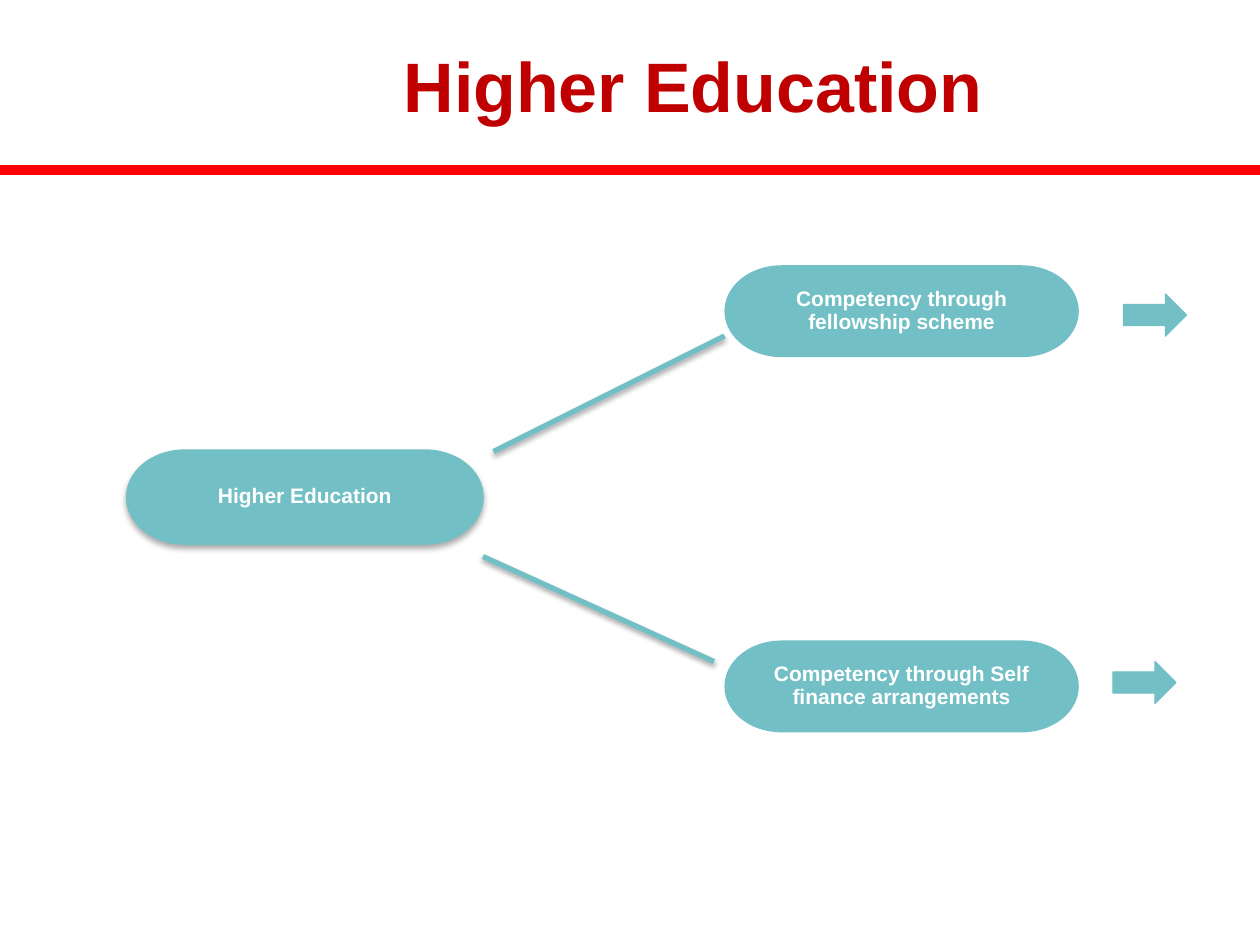
from dataclasses import dataclass

from lxml import etree
from pptx import Presentation
from pptx.dml.color import RGBColor
from pptx.enum.shapes import MSO_CONNECTOR, MSO_SHAPE
from pptx.enum.text import MSO_ANCHOR, PP_ALIGN
from pptx.oxml.ns import qn
from pptx.util import Pt

STRAIGHT = MSO_CONNECTOR.STRAIGHT
TERMINATOR = MSO_SHAPE.FLOWCHART_TERMINATOR
RIGHT_ARROW = MSO_SHAPE.RIGHT_ARROW
MIDDLE = MSO_ANCHOR.MIDDLE
CENTER = PP_ALIGN.CENTER


@dataclass(frozen=True)
class Theme:
    """Colours, font and type sizes of the slide."""
    teal: RGBColor = RGBColor(0x72, 0xBF, 0xC5)
    red: RGBColor = RGBColor(0xFF, 0x00, 0x00)
    title: RGBColor = RGBColor(0xC0, 0x00, 0x00)
    white: RGBColor = RGBColor(0xFF, 0xFF, 0xFF)
    font: str = "Arial"
    title_size: int = 40
    label_size: int = 12


THEME = Theme()
NODE_W, NODE_H = 202.5, 52.5
ARROW_W, ARROW_H = 36, 24


def set_text(tf, text, size, color):
    """Write centred bold text into a frame."""
    tf.text = text
    tf.word_wrap = True
    tf.vertical_anchor = MIDDLE
    p = tf.paragraphs[0]
    p.alignment = CENTER
    font = p.runs[0].font
    font.name, font.size, font.bold = THEME.font, Pt(size), True
    font.color.rgb = color


def fill_shadow(effects, alpha, blur, dist):
    """Put a soft black downward shadow into an effect list."""
    shadow = etree.SubElement(
        effects, qn("a:outerShdw"), blurRad=str(Pt(blur)), dist=str(Pt(dist)),
        dir="5400000", rotWithShape="0")
    color = etree.SubElement(shadow, qn("a:srgbClr"), val="000000")
    etree.SubElement(color, qn("a:alpha"), val=str(alpha * 1000))


def add_title(s, text):
    """Place and format the title placeholder."""
    sp = s.shapes.title
    sp.left, sp.top, sp.width, sp.height = Pt(72), Pt(24), Pt(648), Pt(48)
    set_text(sp.text_frame, text, THEME.title_size, THEME.title)


def add_line(s, start, end, color, width):
    """Draw a straight line and return its effect list."""
    line = s.shapes.add_connector(STRAIGHT, *map(Pt, start + end))
    line.line.color.rgb = color
    line.line.width = Pt(width)
    return etree.SubElement(line._element.spPr, qn("a:effectLst"))


def add_shape(s, kind, left, top, width, height, outline=0):
    """Draw a flat teal shape, outlined if a width is given."""
    sp = s.shapes.add_shape(kind, Pt(left), Pt(top), Pt(width), Pt(height))
    sp.shadow.inherit = False
    sp.fill.solid()
    sp.fill.fore_color.rgb = THEME.teal
    if outline:
        sp.line.color.rgb = THEME.teal
        sp.line.width = Pt(outline)
    else:
        sp.line.fill.background()
    return sp


def add_node(s, text, left, top, outline=0):
    """Draw a labelled terminator."""
    sp = add_shape(s, TERMINATOR, left, top, NODE_W, NODE_H, outline)
    tf = sp.text_frame
    tf.margin_left = tf.margin_right = tf.margin_top = tf.margin_bottom = Pt(0.75)
    set_text(tf, text, THEME.label_size, THEME.white)
    tf.paragraphs[0].line_spacing = 0.9
    return sp


def main():
    """Build the slide and save it."""
    prs = Presentation()
    prs.slide_width, prs.slide_height = Pt(720), Pt(540)
    s = prs.slides.add_slide(prs.slide_layouts[5])

    add_line(s, (0, 97.2), (720, 97.2), THEME.red, 6)
    add_title(s, "Higher Education")

    add_node(s, "Competency through fellowship scheme", 414, 151.6)
    add_node(s, "Competency through Self finance arrangements", 414, 366)
    root = add_node(s, "Higher Education", 73, 257.8, outline=2)
    fill_shadow(root._element.spPr.find(qn("a:effectLst")), 32, 3.5, 2.2)

    for start, end in (((282, 258), (414, 192)), ((276, 318), (408, 378))):
        fill_shadow(add_line(s, start, end, THEME.teal, 3), 35, 3.1, 1.8)

    for left, top in ((642, 168), (636, 378)):
        add_shape(s, RIGHT_ARROW, left, top, ARROW_W, ARROW_H, outline=0.75)

    prs.save("out.pptx")


if __name__ == "__main__":
    main()
